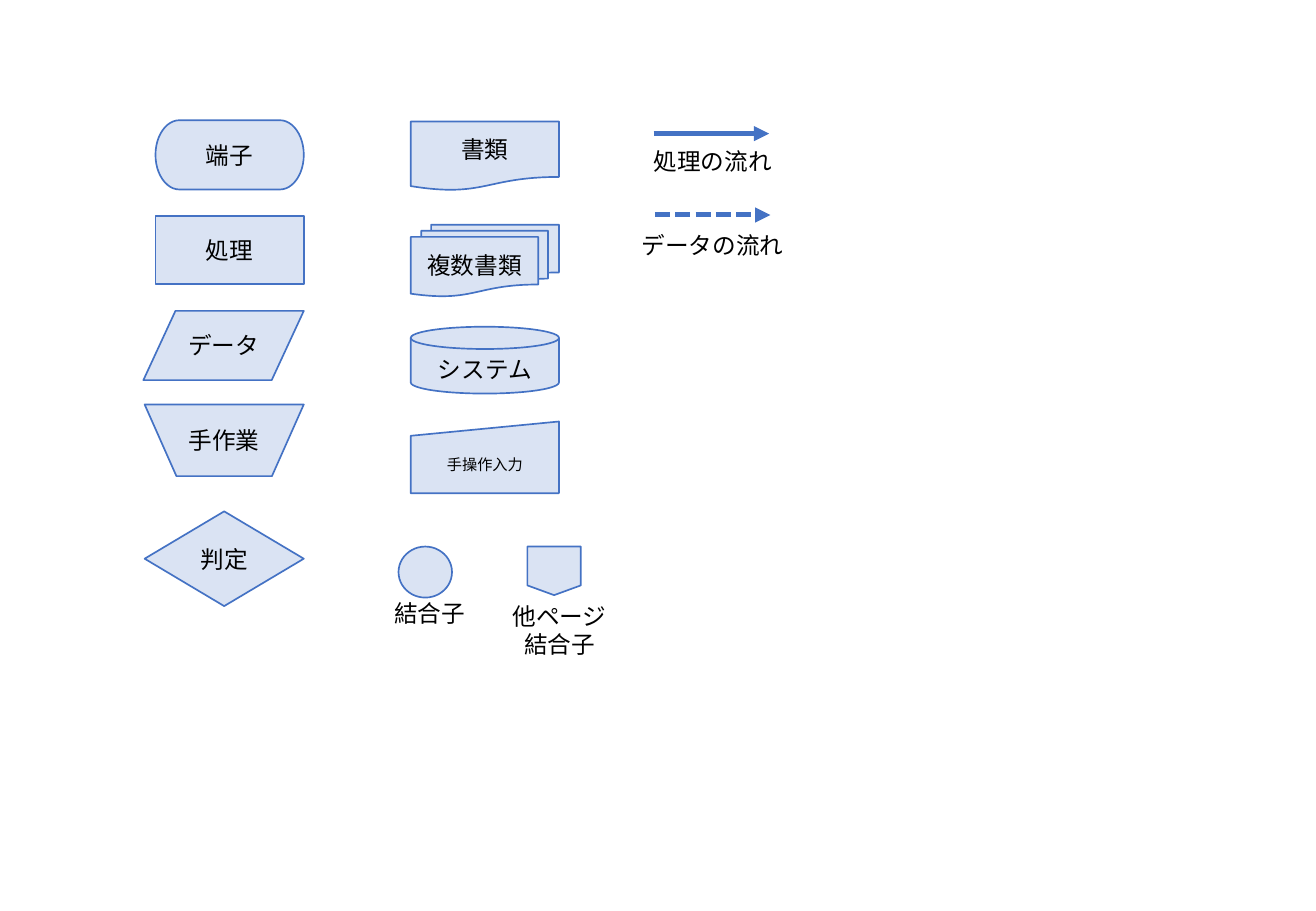
from lxml import etree
from pptx import Presentation
from pptx.dml.color import RGBColor
from pptx.enum.dml import MSO_LINE
from pptx.enum.shapes import MSO_CONNECTOR, MSO_SHAPE
from pptx.enum.text import MSO_ANCHOR, PP_ALIGN
from pptx.oxml.ns import qn
from pptx.util import Inches, Pt

FILL = RGBColor(0xDA, 0xE3, 0xF3)
BLUE = RGBColor(0x44, 0x72, 0xC4)
BLACK = RGBColor(0, 0, 0)
TOP, MIDDLE = MSO_ANCHOR.TOP, MSO_ANCHOR.MIDDLE
LEFT, CENTER = PP_ALIGN.LEFT, PP_ALIGN.CENTER
STRAIGHT = MSO_CONNECTOR.STRAIGHT
SOLID, DASHED = MSO_LINE.SOLID, MSO_LINE.SQUARE_DOT
FONT = "Noto Sans CJK JP"
GRID = Inches(0.1)

# Symbols of the left column share a right edge: kind, text, top, width, height
LEFT_COLUMN_END = 25
LEFT_COLUMN = [
    (MSO_SHAPE.FLOWCHART_TERMINATOR, "端子", 9.9, 12.2, 5.7),
    (MSO_SHAPE.RECTANGLE, "処理", 17.8, 12.2, 5.6),
    (MSO_SHAPE.FLOWCHART_DATA, "データ", 25.6, 13.2, 5.7),
    (MSO_SHAPE.FLOWCHART_MANUAL_OPERATION, "手作業", 33.3, 13.1, 5.9),
    (MSO_SHAPE.FLOWCHART_DECISION, "判定", 42.1, 13.1, 7.8),
]
# Symbols of the right column share a left edge and width:
# kind, text, top, height, text size, anchor
RIGHT_COLUMN_START, RIGHT_COLUMN_WIDTH = 33.8, 12.2
RIGHT_COLUMN = [
    (MSO_SHAPE.FLOWCHART_DOCUMENT, "書類", 10, 5.7, 14, MIDDLE),
    (MSO_SHAPE.FLOWCHART_MULTIDOCUMENT, "複数書類", 18.5, 5.9, 14, MIDDLE),
    (MSO_SHAPE.FLOWCHART_MAGNETIC_DISK, "システム", 26.9, 5.5, 14, TOP),
    (MSO_SHAPE.FLOWCHART_MANUAL_INPUT, "手操作入力", 34.7, 5.9, 9, MIDDLE),
]
# kind, symbol left, symbol height, label lines, label box
JOINT_TOP, JOINT_WIDTH = 45, 4.4
JOINTS = [
    (MSO_SHAPE.FLOWCHART_CONNECTOR, 32.8, 4.2, ["結合子"],
     (29.8, 49, 11.1, 2.9)),
    (MSO_SHAPE.FLOWCHART_OFFPAGE_CONNECTOR, 43.4, 4, ["他ページ", "結合子"],
     (41.1, 49.1, 9.9, 5.5)),
]
# arrow left, arrow height on the slide, dash, label, label box
ARROW_LENGTH = 9.5
FLOWS = [
    (53.8, 11, SOLID, "処理の流れ", (52.8, 11.6, 11.8, 2.9)),
    (53.9, 17.7, DASHED, "データの流れ", (51.8, 18.5, 13.8, 2.9)),
]


def on_grid(*units):
    return [round(u * GRID) for u in units]


class Legend:
    """Draws flowchart elements on one slide, with lengths in grid units."""

    def __init__(self, slide):
        self.shapes = slide.shapes

    def set_text(self, tf, lines, size, align, anchor):
        tf.vertical_anchor = anchor
        for i, line in enumerate(lines):
            p = tf.add_paragraph() if i else tf.paragraphs[0]
            p.text = line
            p.alignment = align
            p.font.size = Pt(size)
            p.font.color.rgb = BLACK
            p.font.name = FONT
            ea = etree.SubElement(p._p.pPr.find(qn("a:defRPr")), qn("a:ea"))
            ea.set("typeface", FONT)

    def symbol(self, kind, box, text="", size=14, anchor=MIDDLE):
        s = self.shapes.add_shape(kind, *on_grid(*box))
        s.shadow.inherit = False
        s.fill.solid()
        s.fill.fore_color.rgb = FILL
        s.line.color.rgb = BLUE
        s.line.width = Pt(1)
        if text:
            tf = s.text_frame
            tf.margin_left = tf.margin_right = 0
            self.set_text(tf, [text], size, CENTER, anchor)

    def label(self, lines, box, align, anchor):
        tf = self.shapes.add_textbox(*on_grid(*box)).text_frame
        tf.word_wrap = False
        self.set_text(tf, lines, 14, align, anchor)

    def arrow(self, x, y, length, dash):
        s = self.shapes.add_connector(STRAIGHT, *on_grid(x, y, x + length, y))
        s.line.color.rgb = BLUE
        s.line.width = Pt(3)
        s.line.dash_style = dash
        props = s._element.spPr
        tail = etree.SubElement(props.find(qn("a:ln")), qn("a:tailEnd"))
        tail.set("type", "triangle")
        etree.SubElement(props, qn("a:effectLst"))


def main():
    prs = Presentation()
    prs.slide_width, prs.slide_height = Inches(10.83), Inches(7.5)
    legend = Legend(prs.slides.add_slide(prs.slide_layouts[6]))

    for kind, text, top, width, height in LEFT_COLUMN:
        legend.symbol(kind, (LEFT_COLUMN_END - width, top, width, height), text)
    for kind, text, top, height, size, anchor in RIGHT_COLUMN:
        box = (RIGHT_COLUMN_START, top, RIGHT_COLUMN_WIDTH, height)
        legend.symbol(kind, box, text, size, anchor)
    for kind, left, height, lines, box in JOINTS:
        legend.symbol(kind, (left, JOINT_TOP, JOINT_WIDTH, height))
        legend.label(lines, box, CENTER, MIDDLE)
    for left, y, dash, text, box in FLOWS:
        legend.arrow(left, y, ARROW_LENGTH, dash)
        legend.label([text], box, LEFT, TOP)

    prs.save("out.pptx")


if __name__ == "__main__":
    main()
